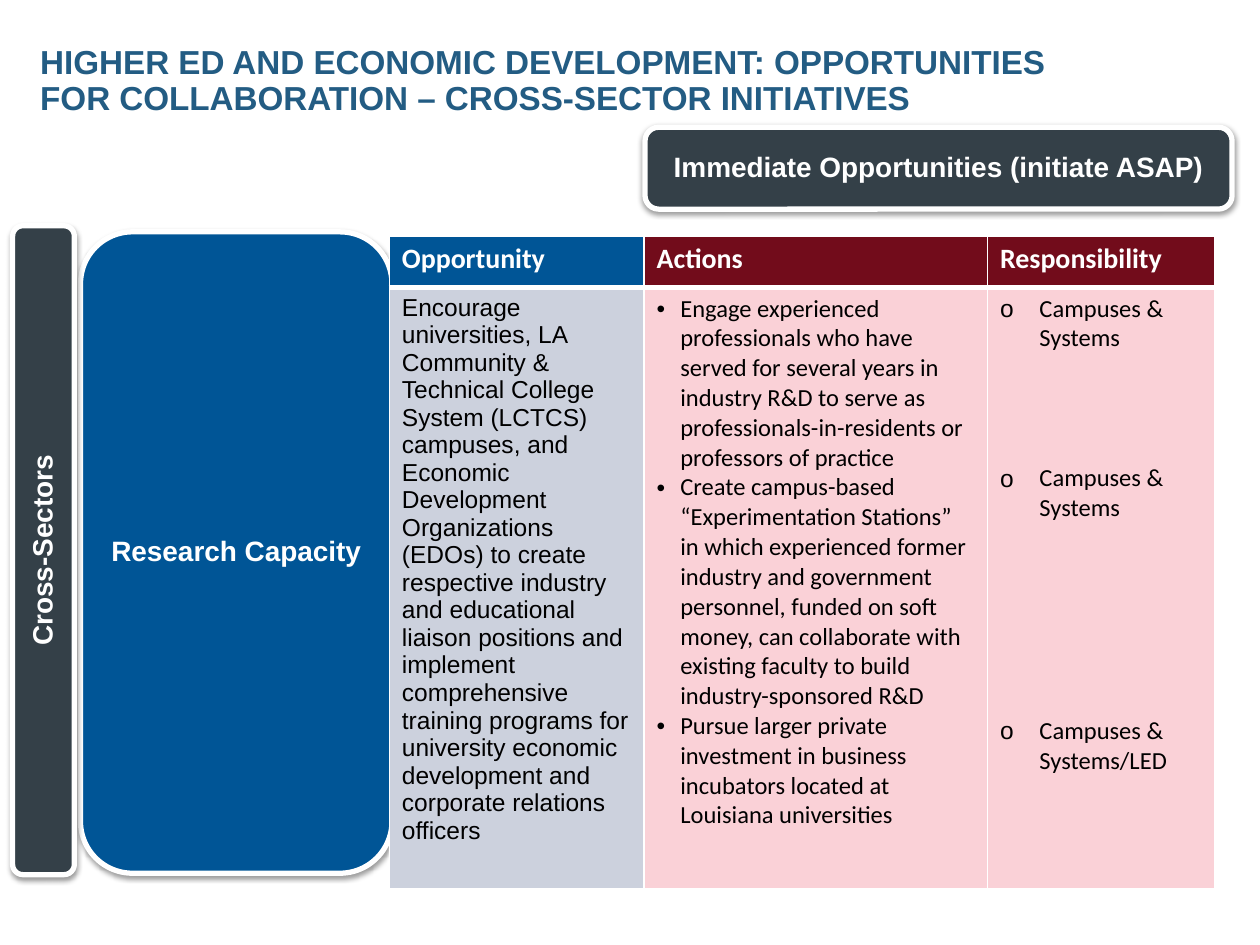
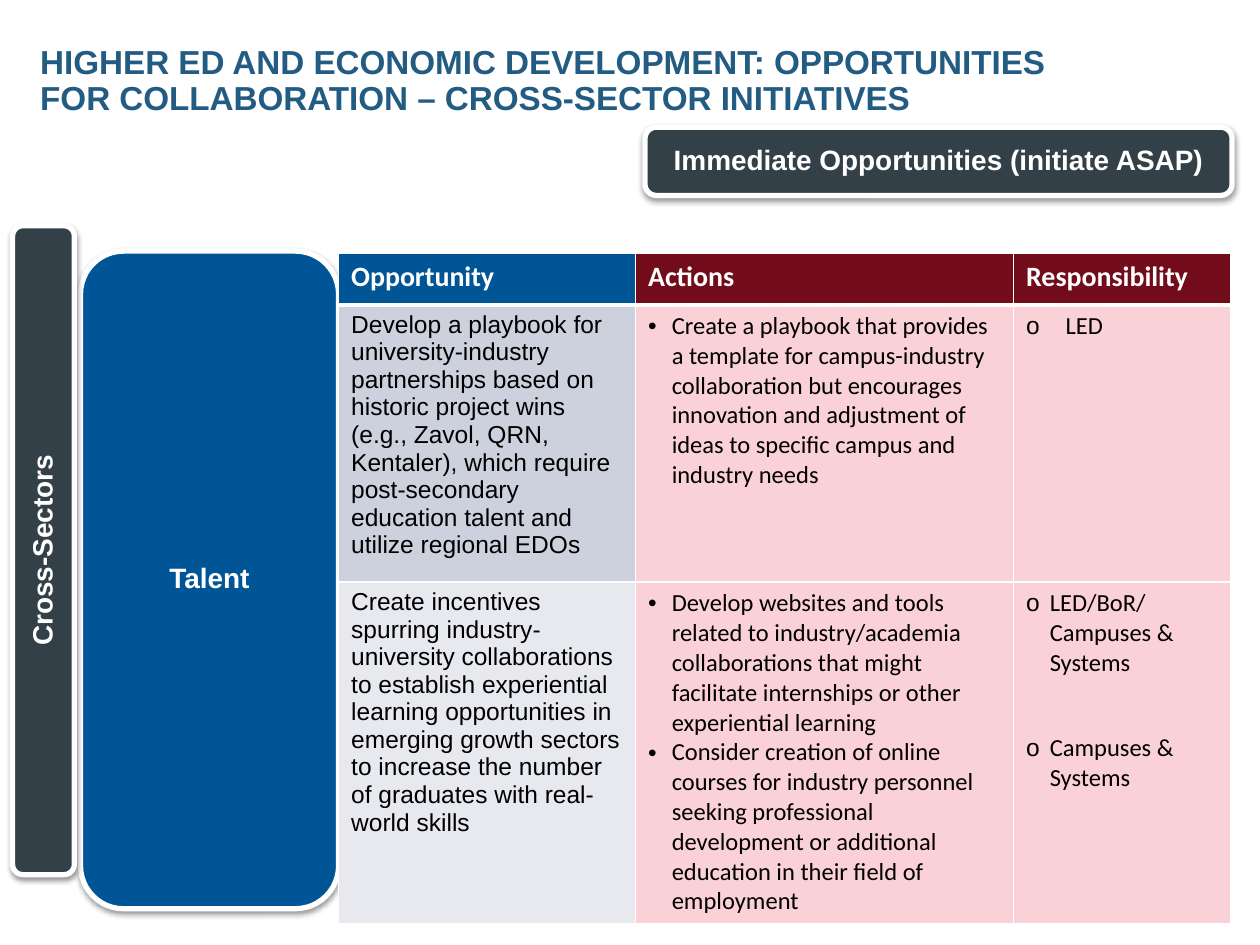
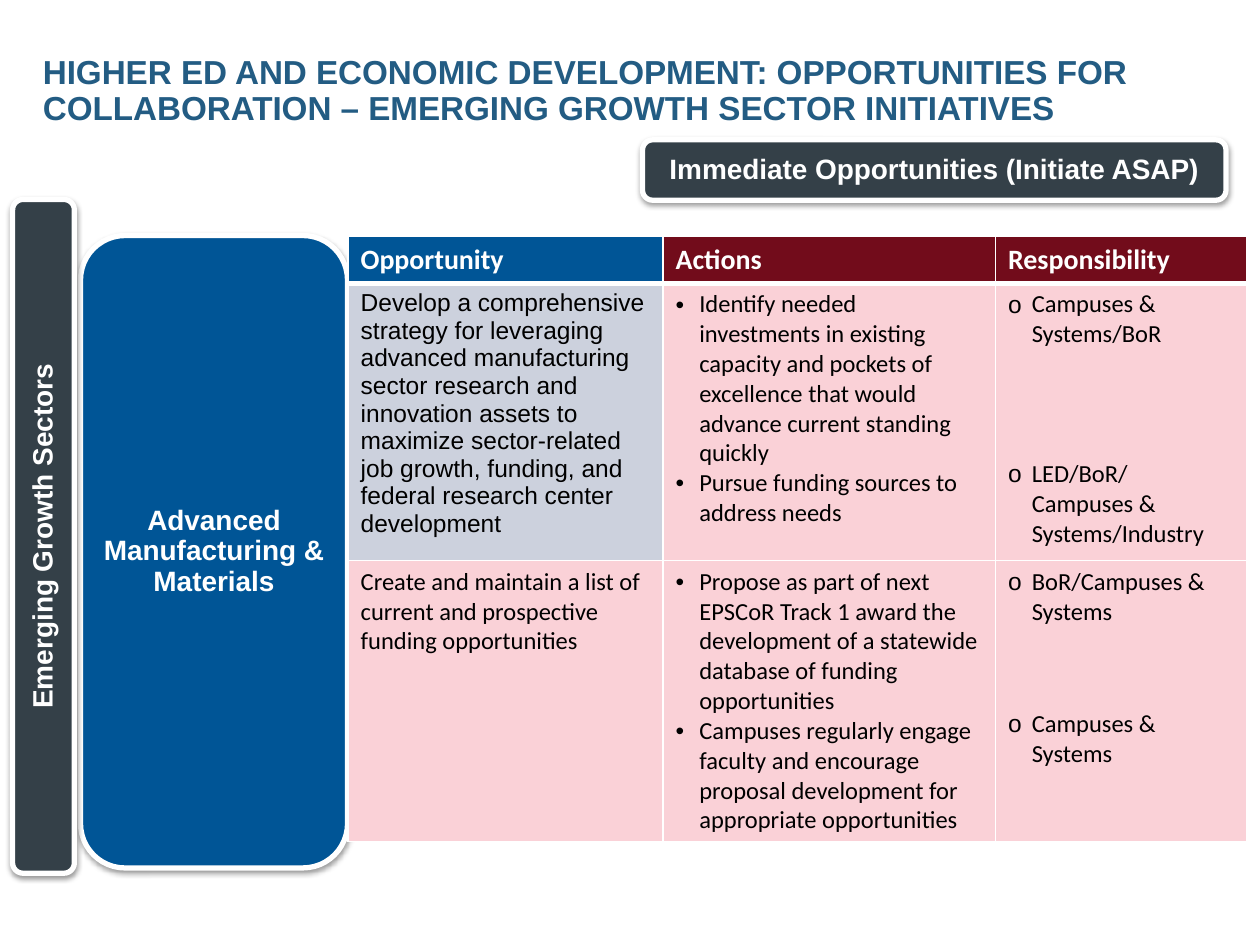
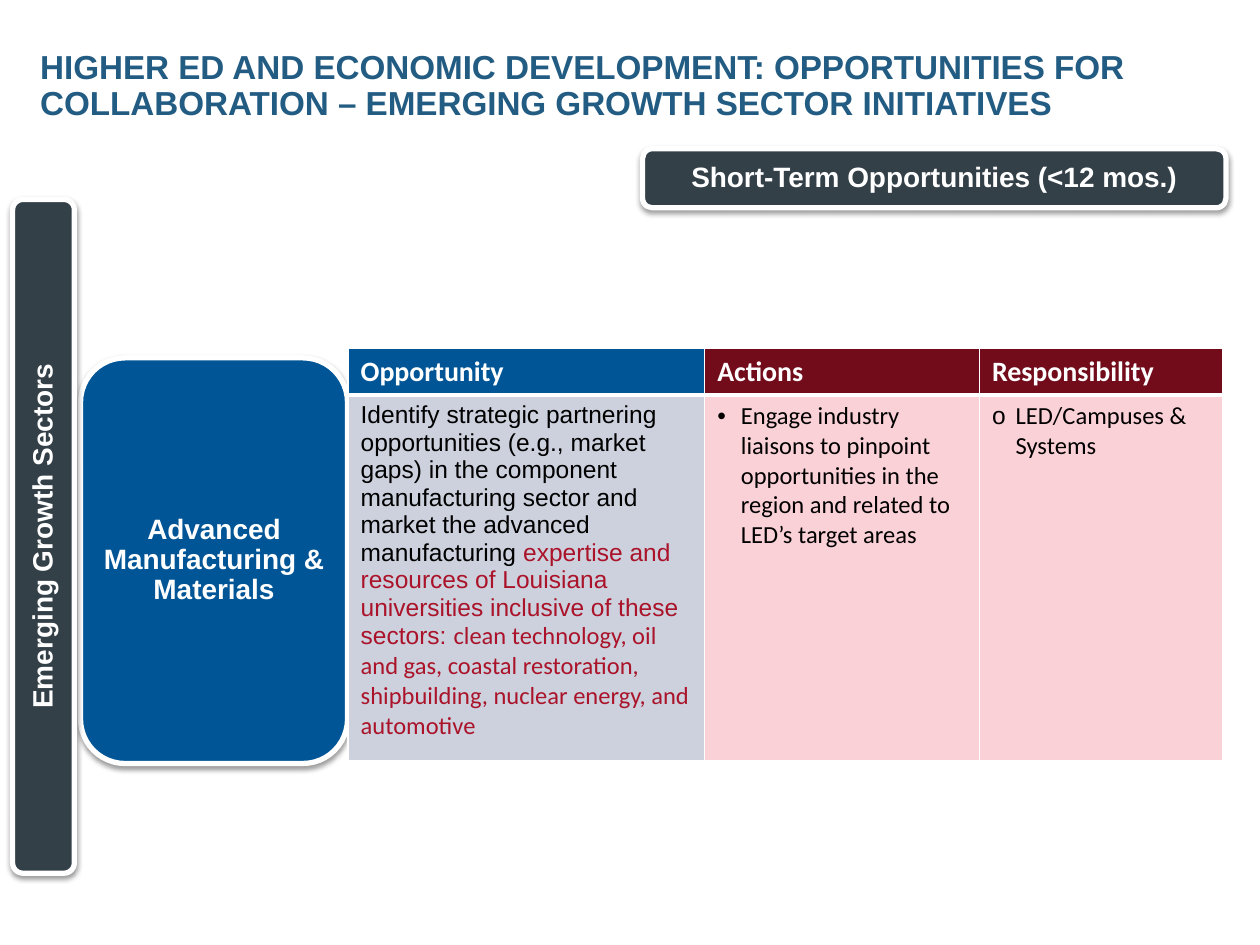
"""Build four slides on higher education and economic development opportunities."""
from dataclasses import dataclass

from lxml.etree import SubElement
from pptx import Presentation
from pptx.dml.color import RGBColor
from pptx.enum.shapes import MSO_SHAPE
from pptx.enum.text import MSO_ANCHOR, PP_ALIGN
from pptx.oxml.ns import qn
from pptx.util import Pt

COLORS = {
    "title": "235C83", "slate": "344048", "blue": "005596", "maroon": "720C1B",
    "mist": "CCD1DD", "pale": "E7E9EF", "pink": "FAD1D7", "red": "AA1329",
    "white": "FFFFFF", "black": "000000",
}
HEADING = "Arial"
BODY = "Calibri"
BLANK_LINE = 15.75
NARROW, WIDE = 13.5, 22.5
HEADERS = [("Opportunity", "blue"), ("Actions", "maroon"), ("Responsibility", "maroon")]
TITLE_START = "HIGHER ED AND ECONOMIC DEVELOPMENT: OPPORTUNITIES FOR COLLABORATION – "


@dataclass
class Initiative:
    opportunity: list
    actions: list
    responsibilities: list
    fill: str = "mist"
    indent: float = NARROW


@dataclass
class Page:
    title: str
    title_box: tuple
    timing: str
    timing_box: tuple
    sector: str
    sector_box: tuple
    topic: str
    topic_box: tuple
    table_origin: tuple
    columns: list
    rows: list
    initiatives: list


CROSS_TITLE = TITLE_START + "CROSS-SECTOR INITIATIVES"
GROWTH_TITLE = TITLE_START + "EMERGING GROWTH SECTOR INITIATIVES"
CROSS_TITLE_BOX = (23, 26, 613.5, 41.8)
CROSS_SECTOR_BOX = (7.2, 129, 35.3, 370.8)
GROWTH_SECTOR_BOX = (7.2, 114, 35.3, 385)
SYSTEMS = "Campuses & Systems"

PAGES = [
    Page(
        CROSS_TITLE, CROSS_TITLE_BOX,
        "Immediate Opportunities (initiate ASAP)", (368.6, 72.7, 335.5, 46.8),
        "Cross-Sectors", CROSS_SECTOR_BOX,
        "Research Capacity", (46, 132.5, 178, 366.5),
        (222.5, 134.8), [145.6, 196.2, 129.7], [29.5, 321.5],
        [Initiative(
            [("Encourage universities, LA Community & Technical College System (LCTCS) "
              "campuses, and Economic Development Organizations (EDOs) to create respective "
              "industry and educational liaison positions and implement comprehensive training "
              "programs for university economic development and corporate relations officers",
              HEADING, "black")],
            ["Engage experienced professionals who have served for several years in industry "
             "R&D to serve as professionals-in-residents or professors of practice",
             "Create campus-based “Experimentation Stations” in which experienced former "
             "industry and government personnel, funded on soft money, can collaborate with "
             "existing faculty to build industry-sponsored R&D",
             "Pursue larger private investment in business incubators located at Louisiana "
             "universities"],
            [(SYSTEMS, 0), (SYSTEMS, 4), ("Campuses & Systems/LED", 7)], indent=WIDE)],
    ),
    Page(
        CROSS_TITLE, CROSS_TITLE_BOX,
        "Immediate Opportunities (initiate ASAP)", (368.6, 72.7, 335.5, 39),
        "Cross-Sectors", CROSS_SECTOR_BOX,
        "Talent", (46, 143.5, 147.5, 375.8),
        (193.5, 144.7), [169.7, 216, 124.2], [29.5, 148.5, 195],
        [Initiative(
            [("Develop a playbook for university-industry partnerships based on historic "
              "project wins (e.g., Zavol, QRN, Kentaler), which require post-secondary "
              "education talent and utilize regional EDOs", HEADING, "black")],
            ["Create a playbook that provides a template for campus-industry collaboration "
             "but encourages innovation and adjustment of ideas to specific campus and "
             "industry needs"],
            [("LED", 0)], indent=WIDE),
         Initiative(
            [("Create incentives spurring industry-university collaborations to establish "
              "experiential learning opportunities in emerging growth sectors to increase the "
              "number of graduates with real-world skills", HEADING, "black")],
            ["Develop websites and tools related to industry/academia collaborations that "
             "might facilitate internships or other experiential learning",
             "Consider creation of online courses for industry personnel seeking professional "
             "development or additional education in their field of employment"],
            [("LED/BoR/ Campuses & Systems", 0), (SYSTEMS, 2)], fill="pale")],
    ),
    Page(
        GROWTH_TITLE, (24.5, 21.6, 630.7, 62),
        "Immediate Opportunities (Initiate ASAP)", (367.2, 79.9, 333.4, 34.5),
        "Emerging Growth Sectors", GROWTH_SECTOR_BOX,
        "Advanced Manufacturing & Materials", (46, 134.6, 152.6, 361.4),
        (198.9, 135.2), [180, 190, 143.3], [26.7, 155.4, 160.6],
        [Initiative(
            [("Develop a comprehensive strategy for leveraging advanced manufacturing sector "
              "research and innovation assets to maximize sector-related job growth, funding, "
              "and federal research center development", HEADING, "black")],
            ["Identify needed investments in existing capacity and pockets of excellence that "
             "would advance current standing quickly",
             "Pursue funding sources to address needs"],
            [("Campuses & Systems/BoR", 0), ("LED/BoR/ Campuses & Systems/Industry", 4)]),
         Initiative(
            [("Create and maintain a list of current and prospective funding opportunities",
              BODY, "black")],
            ["Propose as part of next EPSCoR Track 1 award the development of a statewide "
             "database of funding opportunities",
             "Campuses regularly engage faculty and encourage proposal development for "
             "appropriate opportunities"],
            [("BoR/Campuses & Systems", 0), (SYSTEMS, 3)], fill="pink")],
    ),
    Page(
        GROWTH_TITLE, (23, 18.7, 630.7, 62),
        "Short-Term Opportunities (<12 mos.)", (367.2, 85, 333.4, 33.8),
        "Emerging Growth Sectors", GROWTH_SECTOR_BOX,
        "Advanced Manufacturing & Materials", (46, 204.5, 152.6, 231.8),
        (198.9, 199), [203.8, 157, 138.9], [26.7, 201],
        [Initiative(
            [("Identify strategic partnering opportunities (e.g., market gaps) in the "
              "component manufacturing sector and market the advanced manufacturing ",
              HEADING, "black"),
             ("expertise and resources of Louisiana universities inclusive of these sectors: ",
              HEADING, "red"),
             ("clean technology, oil and gas, coastal restoration, shipbuilding, nuclear "
              "energy, and automotive", BODY, "red")],
            ["Engage industry liaisons to pinpoint opportunities in the region and related to "
             "LED’s target areas"],
            [("LED/Campuses & Systems", 0)])],
    ),
]


def color(name):
    """Return the named colour."""
    return RGBColor.from_string(COLORS[name])


def points(values):
    """Convert numbers to lengths in points."""
    return [Pt(value) for value in values]


def add_run(paragraph, text, font, size, color_name, bold=False):
    """Append one formatted run."""
    run = paragraph.add_run()
    run.text = text
    run.font.name = font
    run.font.size = Pt(size)
    run.font.bold = bold
    run.font.color.rgb = color(color_name)


def add_bullet(paragraph, character, indent):
    """Give a paragraph a bullet with a hanging indent."""
    properties = paragraph._p.get_or_add_pPr()
    properties.set("marL", str(Pt(indent)))
    properties.set("indent", str(-Pt(indent)))
    SubElement(properties, qn("a:buFont"), typeface=HEADING)
    SubElement(properties, qn("a:buChar"), char=character)


def add_shadow(shape):
    """Add a soft shadow below a shape."""
    shape.shadow.inherit = False
    effects = shape._element.spPr.find(qn("a:effectLst"))
    shadow = SubElement(effects, qn("a:outerShdw"), blurRad=str(Pt(3.1)), dist=str(Pt(1.6)),
                        dir="5400000", rotWithShape="0")
    shade = SubElement(shadow, qn("a:srgbClr"), val=COLORS["black"])
    SubElement(shade, qn("a:alpha"), val="38000")


def add_title(slide, box, text):
    """Add the slide title."""
    frame = slide.shapes.add_textbox(*points(box)).text_frame
    frame.word_wrap = True
    frame.vertical_anchor = MSO_ANCHOR.MIDDLE
    frame.margin_left = frame.margin_right = frame.margin_top = frame.margin_bottom = 0
    paragraph = frame.paragraphs[0]
    paragraph.line_spacing = 0.9
    add_run(paragraph, text, HEADING, 19, "title", True)


def add_panel(slide, box, text, fill, upright=False):
    """Add a rounded, outlined panel with a centred label."""
    shape = slide.shapes.add_shape(MSO_SHAPE.ROUNDED_RECTANGLE, *points(box))
    shape.fill.solid()
    shape.fill.fore_color.rgb = color(fill)
    shape.line.color.rgb = color("white")
    shape.line.width = Pt(3)
    add_shadow(shape)
    frame = shape.text_frame
    frame.word_wrap = True
    frame.vertical_anchor = MSO_ANCHOR.MIDDLE
    frame.margin_left = frame.margin_right = Pt(5)
    frame.margin_top = frame.margin_bottom = Pt(2.4)
    if upright:
        frame._txBody.bodyPr.set("vert", "vert270")
    paragraph = frame.paragraphs[0]
    paragraph.alignment = PP_ALIGN.CENTER
    paragraph.line_spacing = 0.9
    add_run(paragraph, text, HEADING, 16, "white", True)


def style_cell(cell, fill, bottom=1):
    """Set the white borders and the fill of a cell."""
    properties = cell._tc.get_or_add_tcPr()
    for side, width in (("L", 1), ("R", 1), ("T", 1), ("B", bottom)):
        line = SubElement(properties, qn(f"a:ln{side}"), w=str(Pt(width)))
        SubElement(SubElement(line, qn("a:solidFill")), qn("a:srgbClr"), val=COLORS["white"])
    cell.fill.solid()
    cell.fill.fore_color.rgb = color(fill)


def fill_list(cell, items, character, indent):
    """Write a bulleted list of texts, each with the blank lines above it."""
    frame = cell.text_frame
    for index, (text, blank_lines) in enumerate(items):
        paragraph = frame.add_paragraph() if index else frame.paragraphs[0]
        if blank_lines:
            paragraph.space_before = Pt(blank_lines * BLANK_LINE)
        add_bullet(paragraph, character, indent)
        add_run(paragraph, text, BODY, 14, "black")


def add_initiatives(slide, origin, columns, rows, initiatives):
    """Add the table of opportunities, actions and responsibilities."""
    table = slide.shapes.add_table(len(rows), len(columns), *points(origin),
                                   Pt(sum(columns)), Pt(sum(rows))).table
    table.first_row = table.horz_banding = False
    for column, width in zip(table.columns, columns):
        column.width = Pt(width)
    for row, height in zip(table.rows, rows):
        row.height = Pt(height)
    for index, (text, fill) in enumerate(HEADERS):
        cell = table.cell(0, index)
        style_cell(cell, fill, bottom=3)
        add_run(cell.text_frame.paragraphs[0], text, BODY, 16, "white", True)
    for number, initiative in enumerate(initiatives, start=1):
        opportunity, actions, responsibility = (table.cell(number, i) for i in range(3))
        style_cell(opportunity, initiative.fill)
        style_cell(actions, "pink")
        style_cell(responsibility, "pink")
        for text, font, color_name in initiative.opportunity:
            add_run(opportunity.text_frame.paragraphs[0], text, font, 14, color_name)
        fill_list(actions, [(text, 0) for text in initiative.actions], "•", NARROW)
        fill_list(responsibility, initiative.responsibilities, "o", initiative.indent)


def add_page(presentation, page):
    """Add one opportunity slide."""
    slide = presentation.slides.add_slide(presentation.slide_layouts[6])
    add_title(slide, page.title_box, page.title)
    add_panel(slide, page.timing_box, page.timing, "slate")
    add_panel(slide, page.topic_box, page.topic, "blue")
    add_panel(slide, page.sector_box, page.sector, "slate", upright=True)
    add_initiatives(slide, page.table_origin, page.columns, page.rows, page.initiatives)


def main():
    """Build and save the presentation."""
    presentation = Presentation()
    presentation.slide_width = Pt(720)
    presentation.slide_height = Pt(540)
    for page in PAGES:
        add_page(presentation, page)
    presentation.save("out.pptx")


if __name__ == "__main__":
    main()
